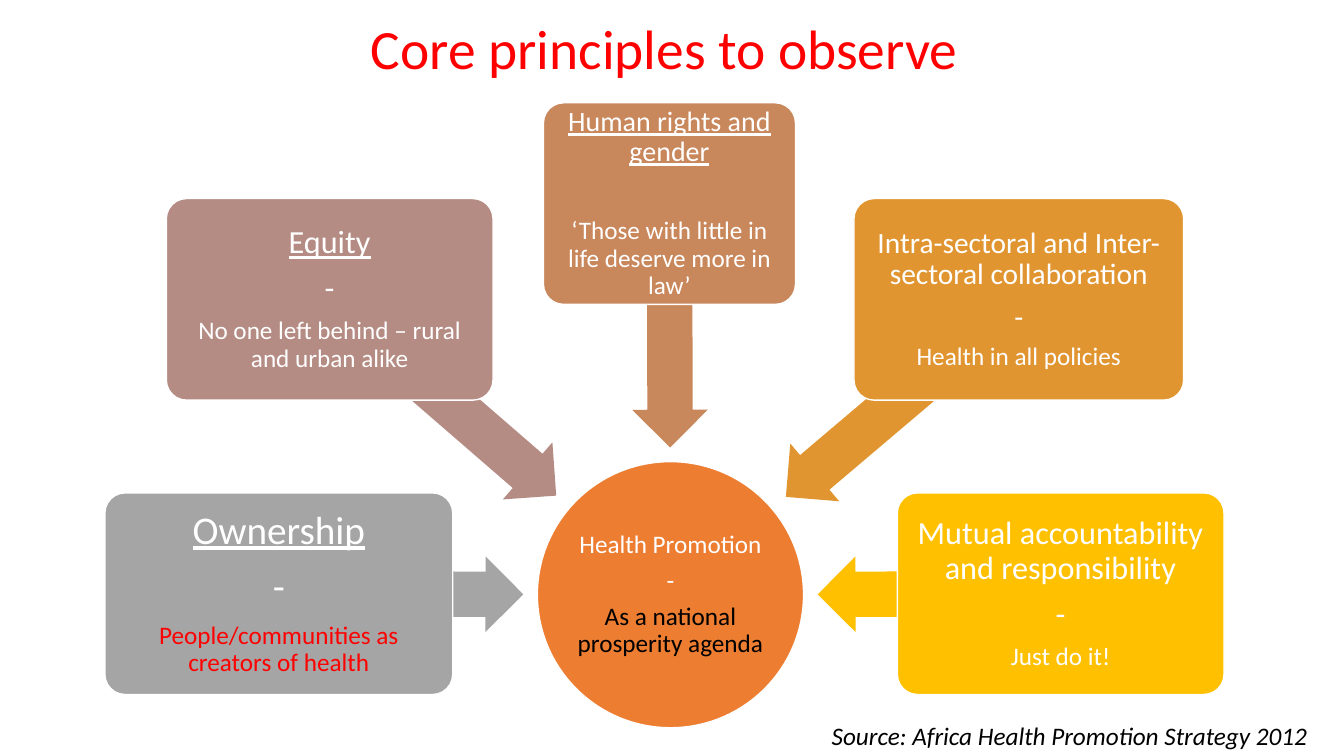
import math
from dataclasses import dataclass

import pptx
import pptx.dml.color
import pptx.enum.shapes
import pptx.enum.text
import pptx.util

RGBColor = pptx.dml.color.RGBColor
WHITE = RGBColor(0xFF, 0xFF, 0xFF)
BLACK = RGBColor(0, 0, 0)
RED = RGBColor(0xFF, 0, 0)
ORANGE = RGBColor(0xED, 0x7D, 0x31)
GREY = RGBColor(0xA5, 0xA5, 0xA5)
MAUVE = RGBColor(0xB4, 0x8C, 0x83)
COPPER = RGBColor(0xC9, 0x87, 0x5C)
AMBER = RGBColor(0xE1, 0x95, 0x30)
GOLD = RGBColor(0xFF, 0xC0, 0)

MSO_SHAPE = pptx.enum.shapes.MSO_SHAPE
PP_ALIGN = pptx.enum.text.PP_ALIGN
MSO_ANCHOR = pptx.enum.text.MSO_ANCHOR

CELLS_PER_INCH = 10
BOX_ROWS = 20
ARROW_ROWS = 7.5
HUB_COL, HUB_ROW, HUB_SIZE = 66.5, 59, 26.4
SPACE_AFTER = 0.35


@dataclass(frozen=True)
class Line:
    text: str
    size: float = 18
    color: RGBColor = WHITE
    underline: bool = False
    italic: bool = False
    after: float | None = None


@dataclass(frozen=True)
class Principle:
    col: float
    row: float
    cols: float
    color: RGBColor
    inset: float
    lines: tuple[Line, ...]
    reach: float = 14.6


HUB_LINES = (
    Line("Health Promotion"),
    Line("-"),
    Line("As a national prosperity agenda", color=BLACK),
)

PRINCIPLES = (
    Principle(10.4, 48.9, 34.5, GREY, 0.6, (
        Line("Ownership", 28, underline=True),
        Line("-", 28),
        Line("People/communities as creators of health", color=RED),
    )),
    Principle(16.5, 19.7, 32.4, MAUVE, 0.5, (
        Line("Equity", 23, underline=True),
        Line("-", 23),
        Line("No one left behind – rural and urban alike"),
    ), reach=15),
    Principle(53.9, 10.2, 25, COPPER, 0.4, (
        Line("Human rights and gender", 20, underline=True, after=36),
        Line("‘Those with little in life deserve more in law’"),
    )),
    Principle(84.7, 19.7, 32.7, AMBER, 0.4, (
        Line("Intra-sectoral and Inter-sectoral collaboration", 21),
        Line("-", 21),
        Line("Health in all policies"),
    ), reach=15),
    Principle(89, 48.9, 32.4, GOLD, 0.5, (
        Line("Mutual accountability and responsibility", 23),
        Line("-", 23),
        Line("Just do it!"),
    )),
)


def cells(n: float) -> int:
    return pptx.util.Inches(n / CELLS_PER_INCH)


def add_line(p, line: Line) -> None:
    r = p.add_run()
    r.text = line.text
    r.font.name = "Calibri"
    r.font.size = pptx.util.Pt(line.size)
    r.font.color.rgb = line.color
    r.font.underline = line.underline
    r.font.italic = line.italic


def add_lines(tf, lines: tuple[Line, ...], inset: float) -> None:
    tf.word_wrap = True
    tf.vertical_anchor = MSO_ANCHOR.MIDDLE
    tf.margin_left = tf.margin_right = cells(inset)
    tf.margin_top = tf.margin_bottom = cells(inset)
    for i, line in enumerate(lines):
        p = tf.add_paragraph() if i else tf.paragraphs[0]
        p.alignment = PP_ALIGN.CENTER
        p.line_spacing = 0.9
        after = line.size * SPACE_AFTER if line.after is None else line.after
        p.space_after = pptx.util.Pt(after)
        add_line(p, line)


def add_filled(shapes, kind, col: float, row: float, cols: float, rows: float,
               color: RGBColor, outlined: bool = True):
    sp = shapes.add_shape(kind, cells(col), cells(row), cells(cols), cells(rows))
    sp.shadow.inherit = False
    sp.fill.solid()
    sp.fill.fore_color.rgb = color
    if outlined:
        sp.line.color.rgb = WHITE
        sp.line.width = pptx.util.Pt(1)
    else:
        sp.line.fill.background()
    return sp


def add_arrow(shapes, principle: Principle) -> None:
    start_col = principle.col + principle.cols / 2
    start_row = principle.row + BOX_ROWS / 2
    dx, dy = HUB_COL - start_col, HUB_ROW - start_row
    distance = math.hypot(dx, dy)
    length = distance - principle.reach
    mid = length / 2 / distance
    sp = add_filled(shapes, MSO_SHAPE.RIGHT_ARROW,
                    start_col + dx * mid - length / 2,
                    start_row + dy * mid - ARROW_ROWS / 2,
                    length, ARROW_ROWS, principle.color, outlined=False)
    sp.adjustments[0], sp.adjustments[1] = 0.6, 0.5
    sp.rotation = math.degrees(math.atan2(dy, dx))


def add_principle(shapes, principle: Principle) -> None:
    add_arrow(shapes, principle)
    sp = add_filled(shapes, MSO_SHAPE.ROUNDED_RECTANGLE, principle.col,
                    principle.row, principle.cols, BOX_ROWS, principle.color)
    sp.adjustments[0] = 0.1
    add_lines(sp.text_frame, principle.lines, principle.inset)


def main() -> None:
    prs = pptx.Presentation()
    prs.slide_width = pptx.util.Inches(13.33)
    prs.slide_height = pptx.util.Inches(7.5)
    s = prs.slides.add_slide(prs.slide_layouts[6])

    title = s.shapes.add_textbox(cells(8.4), cells(1.4), cells(115), cells(7.5))
    add_lines(title.text_frame,
              (Line("Core principles to observe", 39.6, RED, after=0),), 0.5)

    hub = add_filled(s.shapes, MSO_SHAPE.OVAL, HUB_COL - HUB_SIZE / 2,
                     HUB_ROW - HUB_SIZE / 2, HUB_SIZE, HUB_SIZE, ORANGE)
    add_lines(hub.text_frame, HUB_LINES, 0.1)

    for principle in PRINCIPLES:
        add_principle(s.shapes, principle)

    source = s.shapes.add_textbox(cells(81.5), cells(71), cells(49.8), cells(4))
    source.text_frame.word_wrap = False
    add_line(source.text_frame.paragraphs[0],
             Line("Source: Africa Health Promotion Strategy 2012",
                  color=BLACK, italic=True))

    prs.save("out.pptx")


if __name__ == "__main__":
    main()
